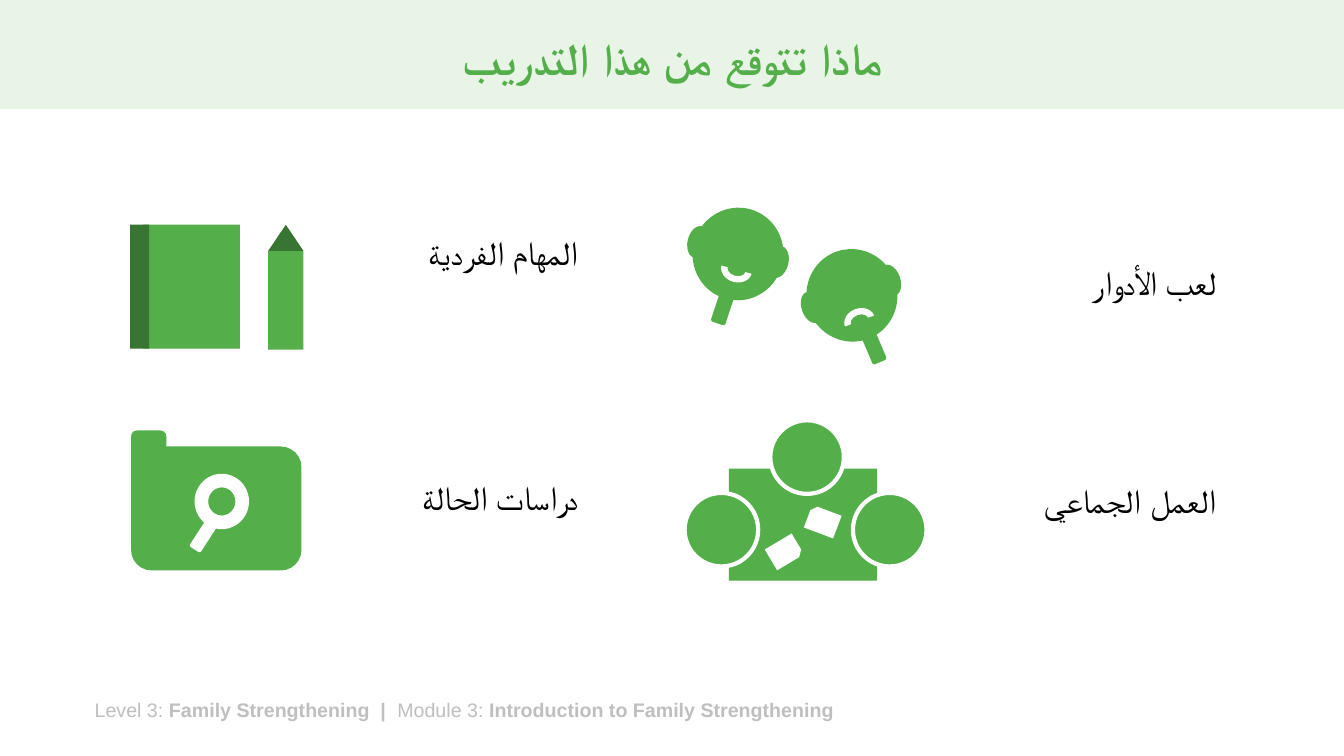
import pptx
import pptx.dml.color
import pptx.enum.shapes
import pptx.enum.text
import pptx.oxml
import pptx.util

Inches = pptx.util.Inches
RGBColor = pptx.dml.color.RGBColor
Shape = pptx.enum.shapes.MSO_SHAPE
Align = pptx.enum.text.PP_ALIGN
Anchor = pptx.enum.text.MSO_ANCHOR

GREEN = RGBColor(0x54, 0xAF, 0x4B)
DARK_GREEN = RGBColor(0x38, 0x75, 0x32)
PALE_GREEN = RGBColor(0xE8, 0xF4, 0xE6)
GREY = RGBColor(0xBF, 0xBF, 0xBF)
WHITE = RGBColor(0xFF, 0xFF, 0xFF)
BLACK = RGBColor(0, 0, 0)

TITLE_FONT = {"name": "Calibri", "size": pptx.util.Pt(32), "bold": True}
LABEL_FONT = {"name": "Arial", "size": pptx.util.Pt(24)}
FOOTER_FONT = {"name": "Arial", "size": pptx.util.Pt(14)}


def set_attributes(target, values):
    for name, value in values.items():
        setattr(target, name, value)


def format_run(run, font, color):
    set_attributes(run.font, font)
    run.font.color.rgb = color


def set_right_to_left(paragraph, alignment):
    paragraph.alignment = alignment
    paragraph._p.get_or_add_pPr().set("rtl", "1")


def add_part(shapes, box, kind, place, fill=GREEN, rotation=0):
    left, top, width, height = place
    shape = shapes.add_shape(kind, Inches(box[0] + left), Inches(box[1] + top),
                             Inches(width), Inches(height))
    shape.shadow.inherit = False
    shape.fill.solid()
    shape.fill.fore_color.rgb = fill
    shape.line.fill.background()
    shape.rotation = rotation
    return shape


def add_text_box(slide, box):
    text_box = slide.shapes.add_textbox(*map(Inches, box))
    text_box.text_frame.word_wrap = True
    return text_box.text_frame.paragraphs[0]


def add_header(slide, box):
    title = slide.shapes.title
    band = add_part(slide.shapes, box, Shape.RECTANGLE, (0, 0, box[2], box[3]), PALE_GREEN)
    title._element.addprevious(band._element)
    set_attributes(title, {"left": Inches(box[0] + 0.92), "top": Inches(box[1] + 0.13),
                           "width": Inches(11.5), "height": Inches(0.95)})
    set_attributes(title.text_frame, {"vertical_anchor": Anchor.MIDDLE, "word_wrap": True})
    paragraph = title.text_frame.paragraphs[0]
    set_right_to_left(paragraph, Align.CENTER)
    paragraph.line_spacing = 0.9
    run = paragraph.add_run()
    run.text = "ماذا تتوقع من هذا التدريب"
    format_run(run, TITLE_FONT, GREEN)


def add_footer(slide, box):
    paragraph = add_text_box(slide, box)
    for text, bold in (("Level 3: ", False), ("Family Strengthening  |  ", True),
                       ("Module 3: ", False), ("Introduction to Family Strengthening", True)):
        run = paragraph.add_run()
        run.text = text
        format_run(run, {**FOOTER_FONT, "bold": bold}, GREY)


def add_label(slide, box, text, complex_font=None):
    paragraph = add_text_box(slide, box)
    set_right_to_left(paragraph, Align.RIGHT)
    run = paragraph.add_run()
    run.text = text
    format_run(run, LABEL_FONT, BLACK)
    if complex_font:
        properties = run._r.get_or_add_rPr()
        script_font = properties.makeelement(pptx.oxml.ns.qn("a:cs"), {"typeface": complex_font})
        properties.append(script_font)


def add_book_and_pencil(slide, box):
    shapes = slide.shapes.add_group_shape().shapes
    add_part(shapes, box, Shape.RECTANGLE, (0.13, 0, 0.96, 1.23))
    add_part(shapes, box, Shape.RECTANGLE, (0, 0, 0.19, 1.23), DARK_GREEN)
    add_part(shapes, box, Shape.ISOSCELES_TRIANGLE, (1.37, 0, 0.35, 0.26), DARK_GREEN)
    add_part(shapes, box, Shape.RECTANGLE, (1.37, 0.26, 0.35, 0.98))


def add_mask(shapes, box, tilt, stick, ears, mouth):
    add_part(shapes, box, Shape.ROUNDED_RECTANGLE, (*stick[:2], 0.15, 0.43), rotation=stick[2])
    add_part(shapes, box, Shape.OVAL, (0, 0, 0.9, 0.92), rotation=tilt)
    for ear in ears:
        add_part(shapes, box, Shape.OVAL, (*ear, 0.2, 0.32), rotation=tilt)
    add_part(shapes, box, Shape.BLOCK_ARC, (*mouth[:2], 0.31, 0.25), WHITE, mouth[2])


def add_masks(slide, box):
    shapes = slide.shapes.add_group_shape().shapes
    left, top = box
    add_mask(shapes, (left + 0.05, top), 13.8, (0.24, 0.73, 18.3),
             ((-0.05, 0.18), (0.75, 0.38)), (0.28, 0.49, 195.3))
    add_mask(shapes, (left + 1.18, top + 0.41), 341, (0.57, 0.71, 336.9),
             ((-0.05, 0.42), (0.73, 0.15)), (0.37, 0.59, 339.3))


def add_case_folder(slide, box):
    shapes = slide.shapes.add_group_shape().shapes
    add_part(shapes, box, Shape.ROUNDED_RECTANGLE, (0, 0.16, 1.69, 1.23))
    add_part(shapes, box, Shape.ROUND_2_SAME_RECTANGLE, (0, 0, 0.35, 0.38))
    add_part(shapes, box, Shape.DONUT, (0.63, 0.43, 0.54, 0.55), WHITE)
    add_part(shapes, box, Shape.ROUNDED_RECTANGLE, (0.66, 0.86, 0.13, 0.35), WHITE, 33)


def add_group_table(slide, box):
    shapes = slide.shapes.add_group_shape().shapes
    add_part(shapes, box, Shape.RECTANGLE, (0.44, 0.48, 1.47, 1.11))
    for left, top in ((0, 0.72), (0.85, 0), (1.67, 0.72)):
        person = add_part(shapes, box, Shape.OVAL, (left, top, 0.73, 0.73))
        person.line.color.rgb = WHITE
        person.line.width = pptx.util.Pt(3)
    for left, top, rotation in ((0.87, 1.15, 59.1), (1.25, 0.85, 290.6)):
        paper = add_part(shapes, box, Shape.SNIP_1_RECTANGLE, (left, top, 0.24, 0.31),
                         WHITE, rotation)
        paper.adjustments[0] = 0.23


def main():
    presentation = pptx.Presentation()
    set_attributes(presentation, {"slide_width": Inches(13.33), "slide_height": Inches(7.5)})
    slide = presentation.slides.add_slide(presentation.slide_layouts[5])
    add_header(slide, (0, 0, 13.33, 1.08))
    add_footer(slide, (0.84, 6.87, 10.62, 0.34))
    add_label(slide, (9.45, 2.55, 2.71, 0.5), "لعب الأدوار")
    add_label(slide, (3.48, 2.25, 2.35, 0.91), "المهام الفردية")
    add_book_and_pencil(slide, (1.29, 2.23))
    add_masks(slide, (6.82, 2.06))
    add_label(slide, (9.45, 4.71, 2.71, 0.5), "العمل الجماعي", "Arial")
    add_label(slide, (3.48, 4.68, 2.35, 0.5), "دراسات الحالة")
    add_case_folder(slide, (1.3, 4.27))
    add_group_table(slide, (6.79, 4.17))
    presentation.save("out.pptx")


if __name__ == "__main__":
    main()
